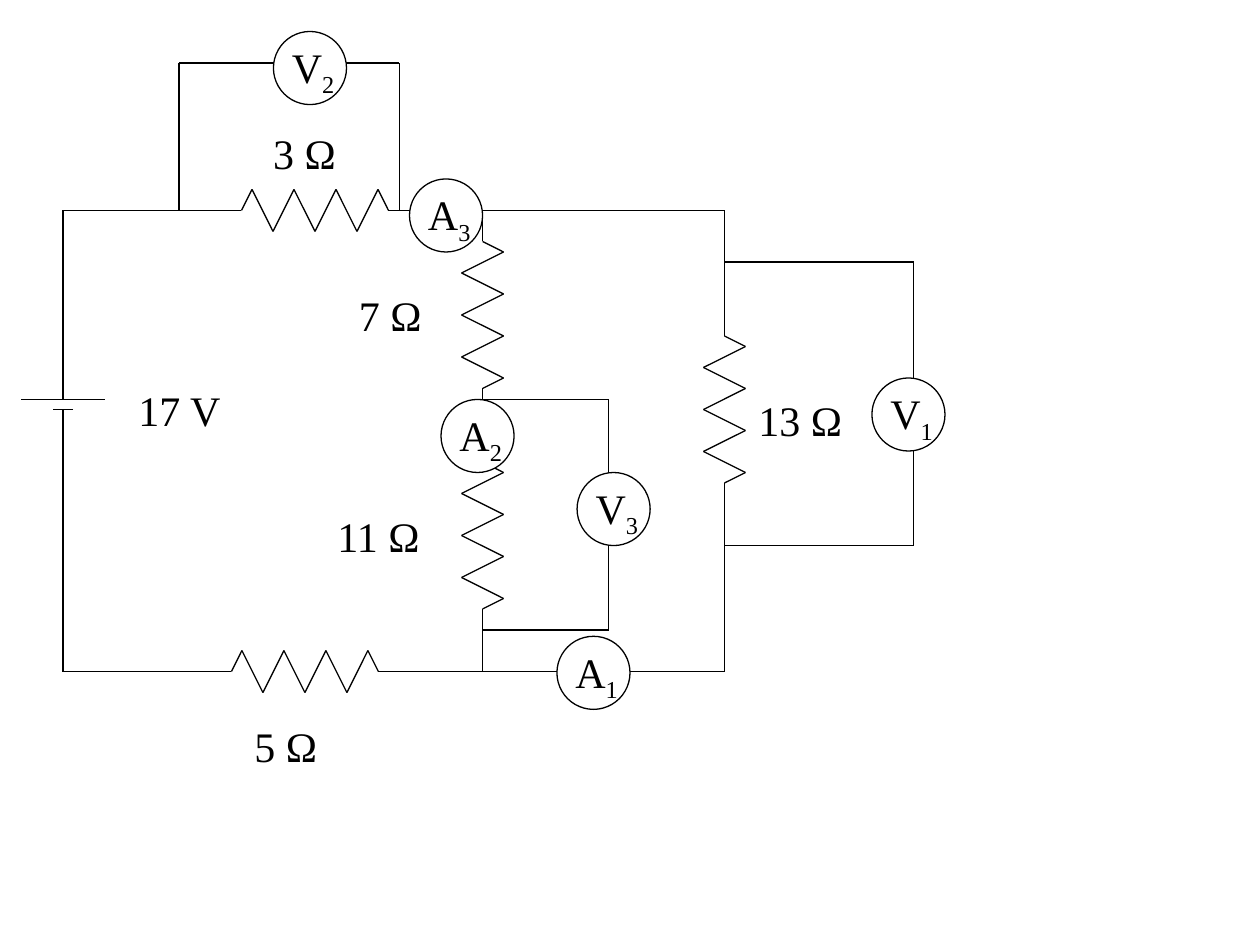
from dataclasses import dataclass
from itertools import pairwise

from lxml import etree
from pptx import Presentation
from pptx.dml.color import RGBColor
from pptx.enum.shapes import MSO_CONNECTOR, MSO_SHAPE
from pptx.enum.text import MSO_AUTO_SIZE, PP_ALIGN
from pptx.oxml.ns import qn
from pptx.shapes.shapetree import GroupShapes, SlideShapes
from pptx.util import Inches, Pt

STRAIGHT = MSO_CONNECTOR.STRAIGHT
OVAL = MSO_SHAPE.OVAL
GROW = MSO_AUTO_SIZE.SHAPE_TO_FIT_TEXT
LEFT, CENTER = PP_ALIGN.LEFT, PP_ALIGN.CENTER

COLORS = {"ink": "000000", "meter": "FFFFFF"}
FONT = "Times New Roman"
FONT_SIZE = Pt(24)
LINE_WIDTH = Pt(0.75)
UNIT = 1 / 6  # half of one zigzag's width and the length of a lead
PEAKS = 7
METER_SIZE = 0.58
LABEL_HEIGHT = 0.5

Point = tuple[float, float]


@dataclass(frozen=True)
class Resistor:
    x: float
    y: float
    vertical: bool


@dataclass(frozen=True)
class Label:
    text: str
    x: float
    y: float
    width: float


@dataclass(frozen=True)
class Meter:
    letter: str
    number: str
    x: float
    y: float


RESISTORS = [
    Resistor(1.75, 1.67, False),
    Resistor(1.67, 5.33, False),
    Resistor(3.83, 1.75, True),
    Resistor(3.83, 3.5, True),
    Resistor(5.75, 2.5, True),
]
BATTERY = [
    [(0.5, 2.75), (0.5, 3.17)],
    [(0.83, 3.17), (0.17, 3.17)],
    [(0.58, 3.25), (0.42, 3.25)],
    [(0.5, 3.25), (0.5, 3.67)],
]
MAIN_WIRES = [
    [(0.5, 3.67), (0.5, 5.33), (1.67, 5.33)],
    [(3.08, 5.33), (5.75, 5.33)],
    [(3.83, 5), (3.83, 5.33)],
    [(5.75, 4), (5.75, 5.33)],
    [(3.83, 3.25), (3.83, 3.58)],
    [(3.17, 1.67), (5.75, 1.67)],
    [(3.83, 1.75), (3.83, 1.67)],
    [(5.75, 2.58), (5.75, 1.67)],
    [(1.75, 1.67), (0.5, 1.67)],
    [(0.5, 2.75), (0.5, 1.67)],
]
VOLTMETER_WIRES = [
    [(1.42, 1.67), (1.42, 0.5), (2.25, 0.5)],
    [(2.58, 0.5), (3.17, 0.5), (3.17, 1.67)],
    [(3.83, 3.17), (4.83, 3.17), (4.83, 3.75)],
    [(4.83, 4.33), (4.83, 5), (3.83, 5)],
    [(5.75, 4.33), (7.25, 4.33), (7.25, 3.5)],
    [(7.25, 3.08), (7.25, 2.08), (5.75, 2.08)],
]
LABELS = [
    Label("3 Ω", 2.07, 0.96, 0.7),
    Label("5 Ω", 1.92, 5.67, 0.7),
    Label("7 Ω", 2.75, 2.25, 0.7),
    Label("11 Ω", 2.58, 4, 0.87),
    Label("13 Ω", 5.92, 3.08, 0.87),
    Label("17 V", 1, 3, 0.86),
]
METERS = [
    Meter("V", "2", 2.17, 0.25),
    Meter("A", "3", 3.25, 1.42),
    Meter("V", "1", 6.92, 3),
    Meter("V", "3", 4.58, 3.75),
    Meter("A", "2", 3.5, 3.17),
    Meter("A", "1", 4.42, 5.05),
]


def color(name: str) -> RGBColor:
    return RGBColor.from_string(COLORS[name])


def draw_wire(shapes: SlideShapes, points: list[Point]) -> None:
    """Join successive points with one straight connector each."""
    for start, end in pairwise(points):
        wire = shapes.add_connector(STRAIGHT, *map(Inches, (*start, *end)))
        wire.line.color.rgb = color("ink")
        wire.line.width = LINE_WIDTH
        etree.SubElement(wire._element.spPr, qn("a:effectLst"))


def draw_resistor(shapes: SlideShapes, resistor: Resistor) -> None:
    """Draw a zigzag with a lead at each end, starting at the resistor's x, y."""
    peaks = [((1.5 + i) * UNIT, UNIT * (-1) ** i) for i in range(PEAKS)]
    profile = [(0, 0), (UNIT, 0), *peaks, (8 * UNIT, 0), (9 * UNIT, 0)]
    if resistor.vertical:
        points = [(resistor.x + side, resistor.y + along) for along, side in profile]
    else:
        points = [(resistor.x + along, resistor.y - side) for along, side in profile]
    draw_wire(shapes, points)


def draw_label(
    shapes: SlideShapes | GroupShapes, label: Label, align: PP_ALIGN = LEFT, subscript: str = ""
) -> None:
    box = shapes.add_textbox(
        Inches(label.x), Inches(label.y), Inches(label.width), Inches(LABEL_HEIGHT)
    )
    frame = box.text_frame
    frame.word_wrap = False
    frame.auto_size = GROW
    paragraph = frame.paragraphs[0]
    paragraph.alignment = align
    paragraph.font.name = FONT
    paragraph.font.size = FONT_SIZE
    paragraph.font.color.rgb = color("ink")
    paragraph.add_run().text = label.text
    if subscript:
        number = paragraph.add_run()
        number.text = subscript
        number._r.get_or_add_rPr().set("baseline", "-25000")


def draw_meter(shapes: SlideShapes, meter: Meter) -> None:
    group = shapes.add_group_shape()
    dial = group.shapes.add_shape(
        OVAL, Inches(meter.x), Inches(meter.y), Inches(METER_SIZE), Inches(METER_SIZE)
    )
    dial.shadow.inherit = False
    dial.fill.solid()
    dial.fill.fore_color.rgb = color("meter")
    dial.line.color.rgb = color("ink")
    dial.line.width = LINE_WIDTH
    caption = Label(meter.letter, meter.x + 0.04, meter.y + 0.03, 0.55)
    draw_label(group.shapes, caption, CENTER, meter.number)


def main() -> None:
    deck = Presentation()
    deck.slide_width, deck.slide_height = Inches(10), Inches(7.5)
    shapes = deck.slides.add_slide(deck.slide_layouts[6]).shapes

    for plate in BATTERY:
        draw_wire(shapes, plate)
    for resistor in RESISTORS:
        draw_resistor(shapes, resistor)
    for wire in MAIN_WIRES:
        draw_wire(shapes, wire)
    for label in LABELS:
        draw_label(shapes, label)
    for wire in VOLTMETER_WIRES:
        draw_wire(shapes, wire)
    for meter in METERS:
        draw_meter(shapes, meter)

    deck.save("out.pptx")


if __name__ == "__main__":
    main()
